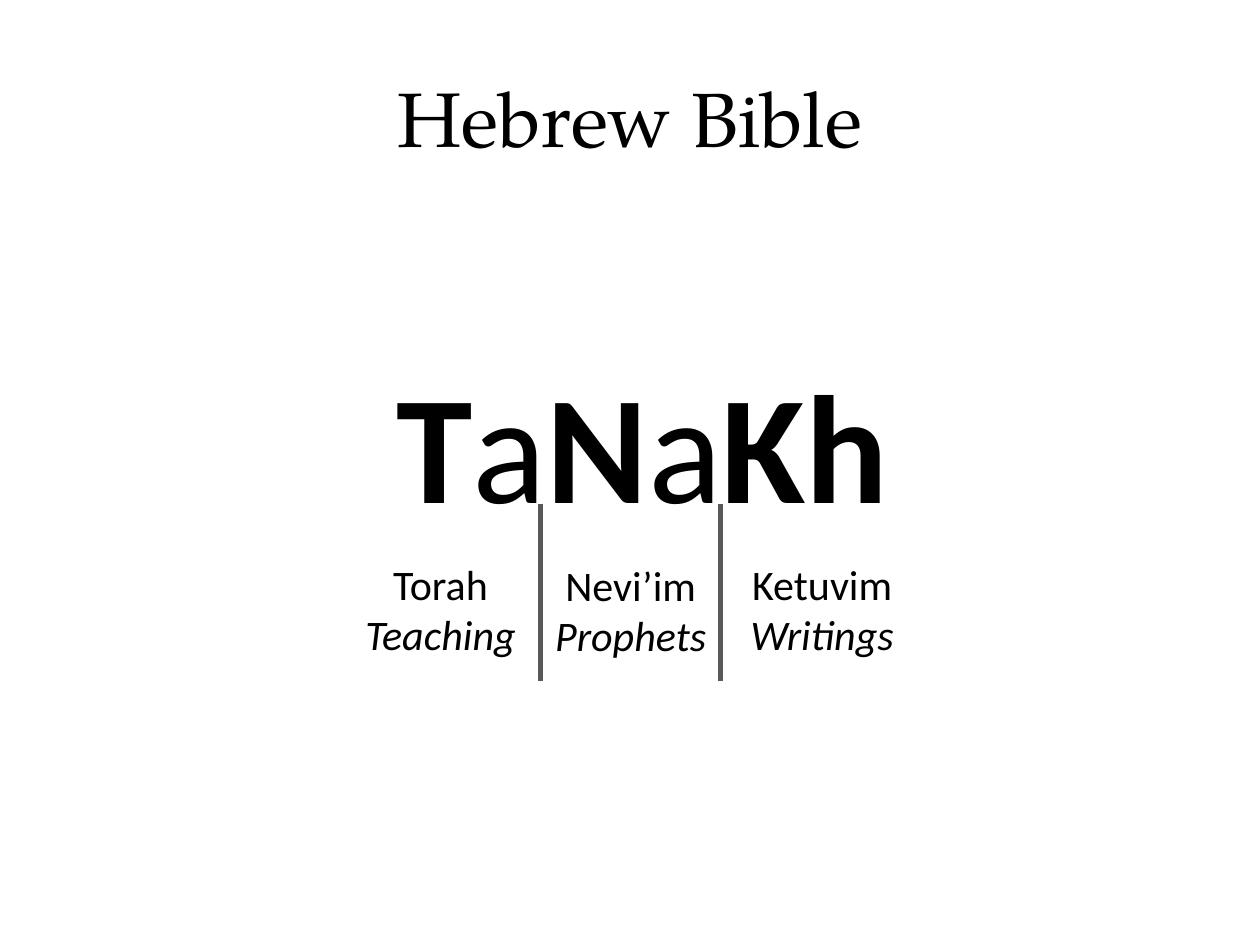
import pptx
import pptx.util
import pptx.dml.color
import pptx.enum.shapes
import pptx.enum.text
from pptx.util import Cm, Pt

BLACK = pptx.dml.color.RGBColor(0x00, 0x00, 0x00)
GREY = pptx.dml.color.RGBColor(0x59, 0x59, 0x59)
CENTER = pptx.enum.text.PP_ALIGN.CENTER


def add_box(left, top, width, height, wrap=False):
    sp = slide.shapes.add_textbox(Cm(left), Cm(top), Cm(width), Cm(height))
    sp.text_frame.word_wrap = wrap
    return sp.text_frame


def set_font(p, name, size):
    p.font.name = name
    p.font.size = Pt(size)
    p.font.color.rgb = BLACK


prs = pptx.Presentation()
prs.slide_width = Cm(25.4)
prs.slide_height = Cm(19.05)
slide = prs.slides.add_slide(prs.slide_layouts[6])

# Title
tf = add_box(1.27, 0.76, 22.86, 3.18, wrap=True)
tf.vertical_anchor = pptx.enum.text.MSO_ANCHOR.MIDDLE
p = tf.paragraphs[0]
p.text = "Hebrew Bible"
p.alignment = CENTER
set_font(p, "TeX Gyre Pagella", 44)

# Acronym, with the initials of the three parts in bold
p = add_box(7.75, 6.93, 10.54, 4.01).paragraphs[0]
set_font(p, "Calibri", 88)
for text, bold in [("T", True), ("a", False), ("N", True), ("a", False), ("Kh", True)]:
    r = p.add_run()
    r.text = text
    r.font.bold = bold

# The three parts: Hebrew name and its meaning
parts = [
    ("Torah", "Teaching", 7.09, 11.13, 3.58),
    ("Nevi’im", "Prophets", 10.9, 11.15, 3.63),
    ("Ketuvim", "Writings", 14.86, 11.13, 3.43),
]
for name, meaning, left, top, width in parts:
    tf = add_box(left, top, width, 2.31)
    tf.text = f"{name}\n{meaning}"
    for p in tf.paragraphs:
        p.alignment = CENTER
        set_font(p, "Calibri", 24)
    tf.paragraphs[1].font.italic = True

# Dividers between the parts
for x in (10.9, 14.53):
    line = slide.shapes.add_connector(
        pptx.enum.shapes.MSO_CONNECTOR.STRAIGHT, Cm(x), Cm(10.15), Cm(x), Cm(13.72))
    line.line.color.rgb = GREY
    line.line.width = Pt(3)
    line._element.spPr.append(pptx.oxml.parse_xml(
        '<a:effectLst xmlns:a="http://schemas.openxmlformats.org/drawingml/2006/main"/>'))

prs.save("out.pptx")
